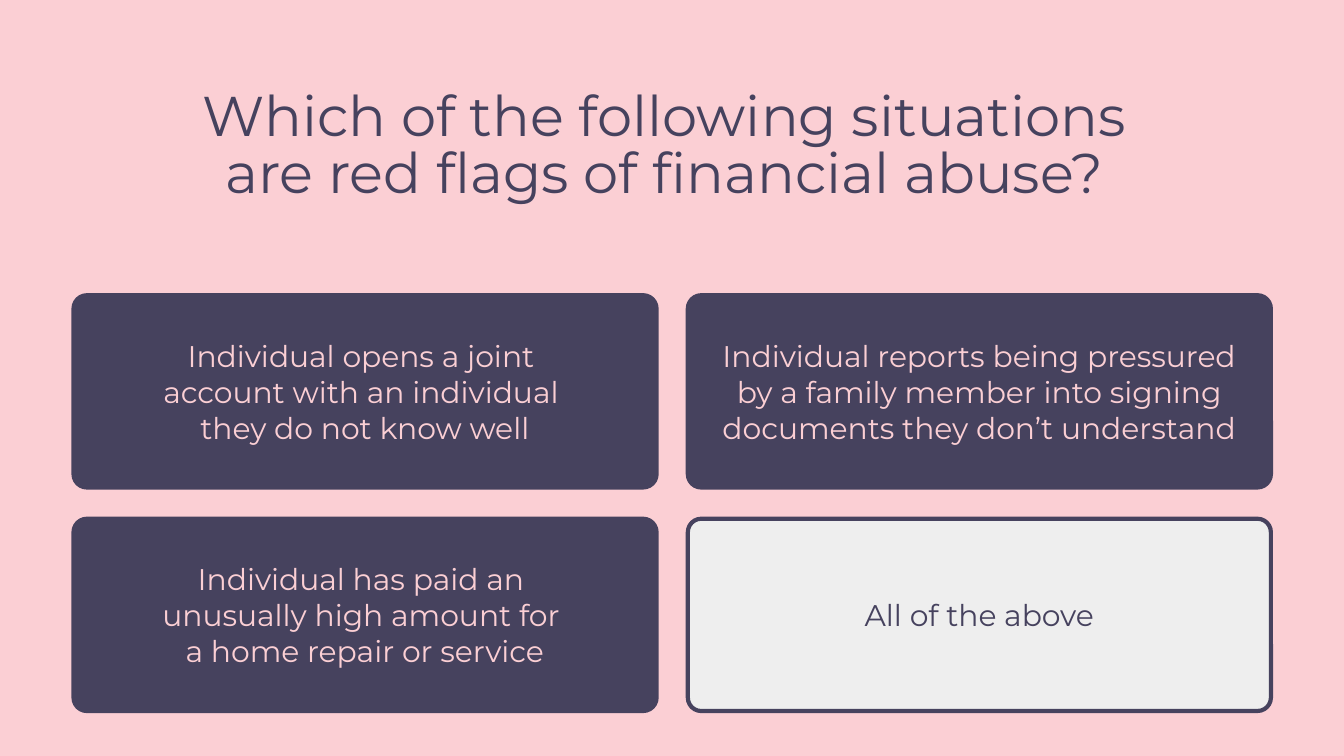
from pptx import Presentation
from pptx import util as u
from pptx.dml.color import RGBColor
from pptx.enum import shapes, text

COLOURS = {"pink": "FBCFD4", "navy": "46425E", "grey": "EEEEEE"}
QUESTION = "Which of the following situations \nare red flags of financial abuse? "
ANSWERS = [
    ["Individual opens a joint \vaccount with an individual \nthey do not know well",
     "Individual reports being pressured by a family member into signing "
     "documents they don’t understand"],
    ["Individual has paid an \vunusually high amount for \na home repair or service",
     "All of the above"],
]
HIGHLIGHT = "All of the above"


def colour(name):
    """Return the named colour of the palette."""
    return RGBColor.from_string(COLOURS[name])


def write(frame, wording, size, ink, anchor, spacing=1.0):
    """Fill a text frame with centred wording in one style."""
    frame.word_wrap = True
    frame.vertical_anchor = anchor
    frame.margin_left = frame.margin_right = u.Cm(0.25)
    frame.margin_top = frame.margin_bottom = u.Cm(0.25)
    frame.text = wording
    for line in frame.paragraphs:
        line.alignment = text.PP_ALIGN.CENTER
        line.line_spacing = spacing
        line.font.name = "Montserrat"
        line.font.size = u.Pt(size)
        line.font.color.rgb = colour(ink)


def add_question(slide, left, top, width, height):
    """Place the question in the given box."""
    question = slide.shapes.add_textbox(u.Cm(left), u.Cm(top), u.Cm(width), u.Cm(height))
    write(question.text_frame, QUESTION, 30, "navy", text.MSO_ANCHOR.TOP, 0.85)


def add_answer(slide, wording, left, top, width, height):
    """Place one rounded answer card in the given box."""
    card = slide.shapes.add_shape(shapes.MSO_SHAPE.ROUNDED_RECTANGLE,
                                  u.Cm(left), u.Cm(top), u.Cm(width), u.Cm(height))
    fill, ink = ("grey", "navy") if wording == HIGHLIGHT else ("navy", "pink")
    card.adjustments[0] = 0.07
    card.shadow.inherit = False
    card.fill.solid()
    card.fill.fore_color.rgb = colour(fill)
    card.line.color.rgb = colour("navy")
    card.line.width = u.Pt(2.25)
    write(card.text_frame, wording, 16, ink, text.MSO_ANCHOR.MIDDLE)


def add_answers(slide, left, top, width, height, gap):
    """Spread the answer cards over a grid with equal gaps."""
    card_width = (width - gap * (len(ANSWERS[0]) - 1)) / len(ANSWERS[0])
    card_height = (height - gap * (len(ANSWERS) - 1)) / len(ANSWERS)
    for row, answers in enumerate(ANSWERS):
        for column, wording in enumerate(answers):
            add_answer(slide, wording, left + column * (card_width + gap),
                       top + row * (card_height + gap), card_width, card_height)


def main():
    """Build the quiz slide and save it."""
    deck = Presentation()
    deck.slide_width, deck.slide_height = u.Cm(25.4), u.Cm(14.29)
    slide = deck.slides.add_slide(deck.slide_layouts[6])
    slide.background.fill.solid()
    slide.background.fill.fore_color.rgb = colour("pink")
    add_question(slide, 2.51, 1.47, 20.37, 2.67)
    add_answers(slide, 1.39, 5.58, 22.63, 7.86, 0.59)
    deck.save("out.pptx")


if __name__ == "__main__":
    main()
